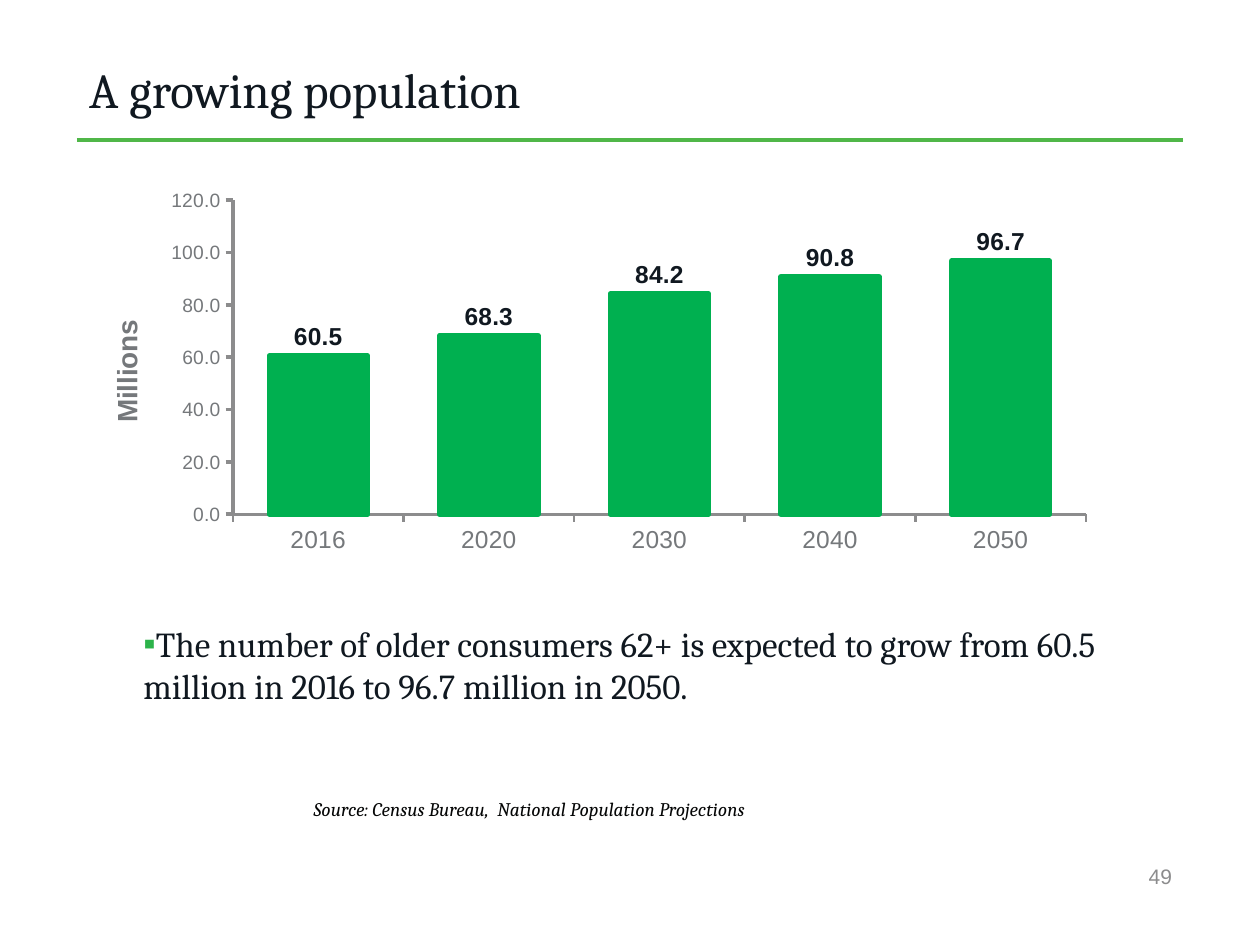
from lxml.etree import SubElement
from pptx import Presentation
from pptx.chart.data import CategoryChartData
from pptx.dml.color import RGBColor as RGB
from pptx.enum.chart import XL_CHART_TYPE as CT, XL_LABEL_POSITION as LP, XL_TICK_MARK as TM
from pptx.enum.shapes import MSO_CONNECTOR as MC
from pptx.enum.text import MSO_ANCHOR as MA, PP_ALIGN as PA
from pptx.oxml import parse_xml
from pptx.oxml.ns import nsdecls, qn
from pptx.util import Inches, Pt

W, H = 10, 7.5
COLORS = {"ink": "101820", "rule": "50B748", "bullet": "2CB34A", "bar": "00B050",
          "axis": "75787B", "line": "8C8C8D", "source": "050606"}
YEARS = ["2016", "2020", "2030", "2040", "2050"]
MILLIONS = [60.5, 68.3, 84.2, 90.8, 96.7]
PLOT = {"x": 0.136, "y": 0.028, "w": 0.838, "h": 0.856}


def set_font(font, color, **fmt):
    """Apply a named colour and the given format values to a font."""
    font.color.rgb = RGB.from_string(COLORS[color])
    for name, value in fmt.items():
        setattr(font, name, value)


def set_line(line, color, width):
    """Give a line a named colour and a width in points."""
    line.color.rgb = RGB.from_string(COLORS[color])
    line.width = Pt(width)


def add_text(slide, box, text, color, size, name="Cambria", anchor=MA.TOP,
             align=PA.LEFT, bullet=None, **fmt):
    """Place one paragraph of text in the box."""
    tf = slide.shapes.add_textbox(*map(Inches, box)).text_frame
    tf.word_wrap, tf.vertical_anchor = True, anchor
    p = tf.paragraphs[0]
    p.alignment = align
    if bullet:
        pPr = p._p.get_or_add_pPr()
        SubElement(SubElement(pPr, qn("a:buClr")), qn("a:srgbClr")).set("val", COLORS["bullet"])
        SubElement(pPr, qn("a:buFont")).set("typeface", "Arial")
        SubElement(pPr, qn("a:buChar")).set("char", bullet)
    r = p.add_run()
    r.text = text
    set_font(r.font, color, name=name, size=Pt(size), **fmt)


def add_heading(slide, box):
    """Place the title with the green rule along its lower edge."""
    x, y, w, h = box
    rule = slide.shapes.add_connector(
        MC.STRAIGHT, *map(Inches, (x, y + h, W - x, y + h)))
    set_line(rule.line, "rule", 2)
    SubElement(rule._element.spPr, qn("a:effectLst"))
    add_text(slide, box, "A growing population", "ink", 28, anchor=MA.MIDDLE)


def add_population_chart(slide, box):
    """Place the column chart of the population in millions."""
    data = CategoryChartData(number_format="#,##0.0")
    data.categories = YEARS
    data.add_series("Series 1", MILLIONS)
    chart = slide.shapes.add_chart(CT.COLUMN_CLUSTERED, *map(Inches, box), data).chart
    chart.has_legend = chart.has_title = False
    set_font(chart.font, "ink", name="Arial", size=Pt(10))

    for axis, size, width in ((chart.category_axis, 14, 1.5), (chart.value_axis, 11, 2)):
        axis.has_major_gridlines = False
        axis.major_tick_mark, axis.minor_tick_mark = TM.OUTSIDE, TM.NONE
        set_line(axis.format.line, "line", width)
        set_font(axis.tick_labels.font, "axis", name="Arial", size=Pt(size))

    val = chart.value_axis
    val.minimum_scale, val.maximum_scale, val.major_unit = 0, 120, 20
    val.tick_labels.number_format = "#,##0.0"
    val.tick_labels.number_format_is_linked = False
    title = val.axis_title.text_frame
    title.text = "Millions"
    set_font(title.paragraphs[0].runs[0].font, "axis", name="Arial", size=Pt(16), bold=True)

    plot = chart.plots[0]
    plot.gap_width, plot.vary_by_categories = 74, False
    bars = plot.series[0].format
    bars.fill.solid()
    bars.fill.fore_color.rgb = RGB.from_string(COLORS["bar"])
    set_line(bars.line, "bar", 3)
    plot.has_data_labels = True
    labels = plot.data_labels
    fmt = {"show_value": True, "number_format": "#,##0.0",
           "number_format_is_linked": False, "position": LP.OUTSIDE_END}
    for name, value in fmt.items():
        setattr(labels, name, value)
    set_font(labels.font, "ink", name="Arial", size=Pt(14), bold=True)

    modes = '<c:layoutTarget val="inner"/><c:xMode val="edge"/><c:yMode val="edge"/>'
    sizes = "".join(f'<c:{k} val="{v}"/>' for k, v in PLOT.items())
    area = chart._chartSpace.chart.plotArea
    for old in area.findall(qn("c:layout")):
        area.remove(old)
    area.insert(0, parse_xml(f'<c:layout {nsdecls("c")}><c:manualLayout>{modes}{sizes}'
                             '</c:manualLayout></c:layout>'))


def main():
    """Build the slide and save it."""
    prs = Presentation()
    prs.slide_width, prs.slide_height = Inches(W), Inches(H)
    slide = prs.slides.add_slide(prs.slide_layouts[6])
    add_heading(slide, (0.61, 0.3, 8.79, 0.81))
    add_population_chart(slide, (0.75, 1.5, 8.08, 2.92))
    add_text(slide, (1.04, 4.89, 8.57, 1.2),
             "The number of older consumers 62+ is expected to grow from 60.5 "
             "million in 2016 to 96.7 million in 2050.", "ink", 20, bullet="▪")
    add_text(slide, (2.39, 6.28, 5, 0.29),
             "Source: Census Bureau,  National Population Projections",
             "source", 11, italic=True)
    add_text(slide, (6.23, 6.75, 3.17, 0.4), "49", "line", 12, name="Arial",
             anchor=MA.MIDDLE, align=PA.RIGHT)
    prs.save("out.pptx")


if __name__ == "__main__":
    main()
